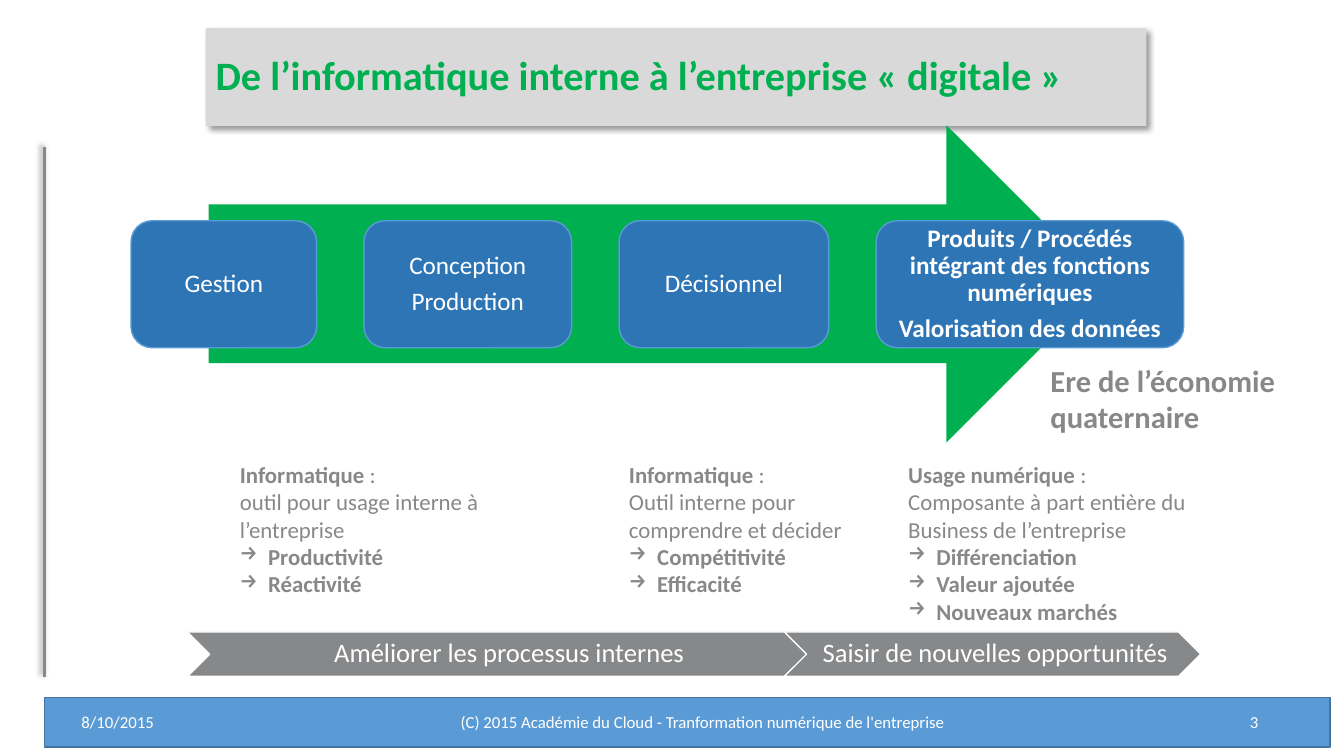
from dataclasses import dataclass

from lxml import etree
from pptx import Presentation
from pptx import util as u
from pptx.dml.color import RGBColor
from pptx.enum import shapes, text
from pptx.oxml import ns


@dataclass(frozen=True)
class Theme:
    font: str = "Calibri"
    white: str = "FFFFFF"
    green: str = "00B050"
    grey: str = "87888A"
    title_fill: str = "D9D9D9"
    footer_fill: str = "5B9BD5"
    footer_line: str = "43739E"
    stage_fill: str = "2E75B6"
    title_size: float = 28.8
    era_size: float = 21.8
    phase_size: float = 19
    stage_size: float = 18
    usage_size: float = 16.3
    footer_size: float = 12


T = Theme()
SHAPE = shapes.MSO_SHAPE
LEFT, CENTER, RIGHT = text.PP_ALIGN.LEFT, text.PP_ALIGN.CENTER, text.PP_ALIGN.RIGHT


def rgb(value):
    return RGBColor.from_string(value)


def add_run(p, content, size, color, bold=False):
    r = p.add_run()
    r.text = content
    r.font.name = T.font
    r.font.size = u.Pt(size)
    r.font.bold = bold
    r.font.color.rgb = rgb(color)


def add_arrow_bullet(p):
    pPr = p._p.get_or_add_pPr()
    pPr.set("marL", str(u.Inches(0.28)))
    pPr.set("indent", str(-u.Inches(0.28)))
    etree.SubElement(pPr, ns.qn("a:buChar"), char="→")


def add_paragraph(tf, content, size, color, bold=False, align=LEFT,
                  line=1.0, after=0, bullet=False):
    first = tf.paragraphs[0]
    p = tf.add_paragraph() if first.runs else first
    p.alignment = align
    p.line_spacing = line
    p.space_after = u.Pt(after)
    if bullet:
        add_arrow_bullet(p)
    add_run(p, content, size, color, bold)
    return p


def add_shadow(spPr, angle):
    effects = spPr.find(ns.qn("a:effectLst"))
    if effects is None:
        effects = etree.SubElement(spPr, ns.qn("a:effectLst"))
    outer = etree.SubElement(effects, ns.qn("a:outerShdw"), blurRad=str(u.Pt(4)),
                             dist=str(u.Pt(3)), dir=str(angle * 60000))
    black = etree.SubElement(outer, ns.qn("a:srgbClr"), val="000000")
    etree.SubElement(black, ns.qn("a:alpha"), val="40000")


def set_frame(tf, insets=(0.1, 0.05, 0.1, 0.05), anchor=text.MSO_ANCHOR.MIDDLE):
    tf.word_wrap = True
    tf.vertical_anchor = anchor
    tf.margin_left, tf.margin_top, tf.margin_right, tf.margin_bottom = map(u.Inches, insets)


def add_box(s, kind, at, fill, line=None, insets=(0.1, 0.05, 0.1, 0.05)):
    sp = s.shapes.add_shape(kind, *map(u.Inches, at))
    sp.shadow.inherit = False
    sp.fill.solid()
    sp.fill.fore_color.rgb = rgb(fill)
    if line:
        sp.line.color.rgb = rgb(line)
        sp.line.width = u.Pt(1)
    else:
        sp.line.fill.background()
    set_frame(sp.text_frame, insets)
    return sp


def add_label(s, at, anchor=text.MSO_ANCHOR.MIDDLE, grow=False):
    tf = s.shapes.add_textbox(*map(u.Inches, at)).text_frame
    set_frame(tf, anchor=anchor)
    if grow:
        tf.auto_size = text.MSO_AUTO_SIZE.SHAPE_TO_FIT_TEXT
    return tf


def add_side_rule(s):
    rule = s.shapes.add_connector(shapes.MSO_CONNECTOR.STRAIGHT, *map(u.Inches, (0.44, 1.46, 0.44, 6.72)))
    rule.line.color.rgb = rgb(T.grey)
    rule.line.width = u.Pt(2)
    add_shadow(rule._element.spPr, 225)


def add_title(s, content):
    sp = add_box(s, SHAPE.RECTANGLE, (2.04, 0.28, 9.33, 0.97), T.title_fill)
    add_shadow(sp._element.spPr, 45)
    add_paragraph(sp.text_frame, content, T.title_size, T.green, bold=True, line=0.9)


def add_footer(s, items):
    add_box(s, SHAPE.RECTANGLE, (0.44, 6.92, 12.75, 0.49), T.footer_fill, T.footer_line)
    for left, width, align, content in items:
        tf = add_label(s, (left, 7.05, width, 0.23))
        add_paragraph(tf, content, T.footer_size, T.white, align=align)


def add_stages(s, stages):
    left, gap = 1.3, 0.47
    for width, bold, lines in stages:
        sp = add_box(s, SHAPE.ROUNDED_RECTANGLE, (left, 2.19, width, 1.26),
                     T.stage_fill, T.footer_fill, (0.07,) * 4)
        for content in lines:
            add_paragraph(sp.text_frame, content, T.stage_size, T.white, bold,
                          CENTER, line=0.9, after=6.3)
        left += width + gap


def add_usage(s, left, width, heading, description, benefits):
    tf = add_label(s, (left, 4.52, width, 1.75), text.MSO_ANCHOR.TOP, grow=True)
    p = add_paragraph(tf, heading, T.usage_size, T.grey, bold=True)
    add_run(p, " :", T.usage_size, T.grey)
    add_paragraph(tf, description, T.usage_size, T.grey)
    for benefit in benefits:
        add_paragraph(tf, benefit, T.usage_size, T.grey, bold=True, bullet=True)


def add_phases(s, phases):
    for left, width, content in phases:
        sp = add_box(s, SHAPE.CHEVRON, (left, 6.27, width, 0.44), T.grey, T.white,
                     (0.08, 0.03, 0.03, 0.03))
        add_paragraph(sp.text_frame, content, T.phase_size, T.white, align=CENTER, line=0.9)


def main():
    prs = Presentation()
    prs.slide_width, prs.slide_height = u.Inches(13.33), u.Inches(7.5)
    s = prs.slides.add_slide(prs.slide_layouts[6])

    add_footer(s, [
        (0.71, 1.15, LEFT, "8/10/2015"),
        (2.14, 9.66, CENTER, "(C) 2015 Académie du Cloud - Tranformation numérique de l'entreprise"),
        (12.06, 0.52, RIGHT, "3"),
    ])
    add_side_rule(s)
    add_title(s, "De l’informatique interne à l’entreprise « digitale »")
    add_box(s, SHAPE.RIGHT_ARROW, (2.07, 1.24, 8.89, 3.15), T.green)
    add_stages(s, [
        (1.84, False, ["Gestion"]),
        (2.06, False, ["Conception", "Production"]),
        (2.08, False, ["Décisionnel"]),
        (3.05, True, ["Produits / Procédés intégrant des fonctions numériques",
                      "Valorisation des données"]),
    ])
    add_usage(s, 2.28, 3.28, "Informatique", "outil pour usage interne à l’entreprise",
              ["Productivité", "Réactivité"])
    add_usage(s, 6.14, 2.36, "Informatique", "Outil interne pour comprendre et décider",
              ["Compétitivité", "Efficacité"])
    add_usage(s, 8.91, 3.27, "Usage numérique",
              "Composante à part entière du Business de l’entreprise",
              ["Différenciation", "Valeur ajoutée", "Nouveaux marchés"])
    era = add_label(s, (10.32, 3.54, 2.43, 0.83), text.MSO_ANCHOR.TOP, grow=True)
    add_paragraph(era, "Ere de l’économie quaternaire", T.era_size, T.grey, bold=True)
    add_phases(s, [
        (1.86, 6.33, "Améliorer les processus internes"),
        (7.78, 4.13, "Saisir de nouvelles opportunités"),
    ])
    prs.save("out.pptx")


if __name__ == "__main__":
    main()
